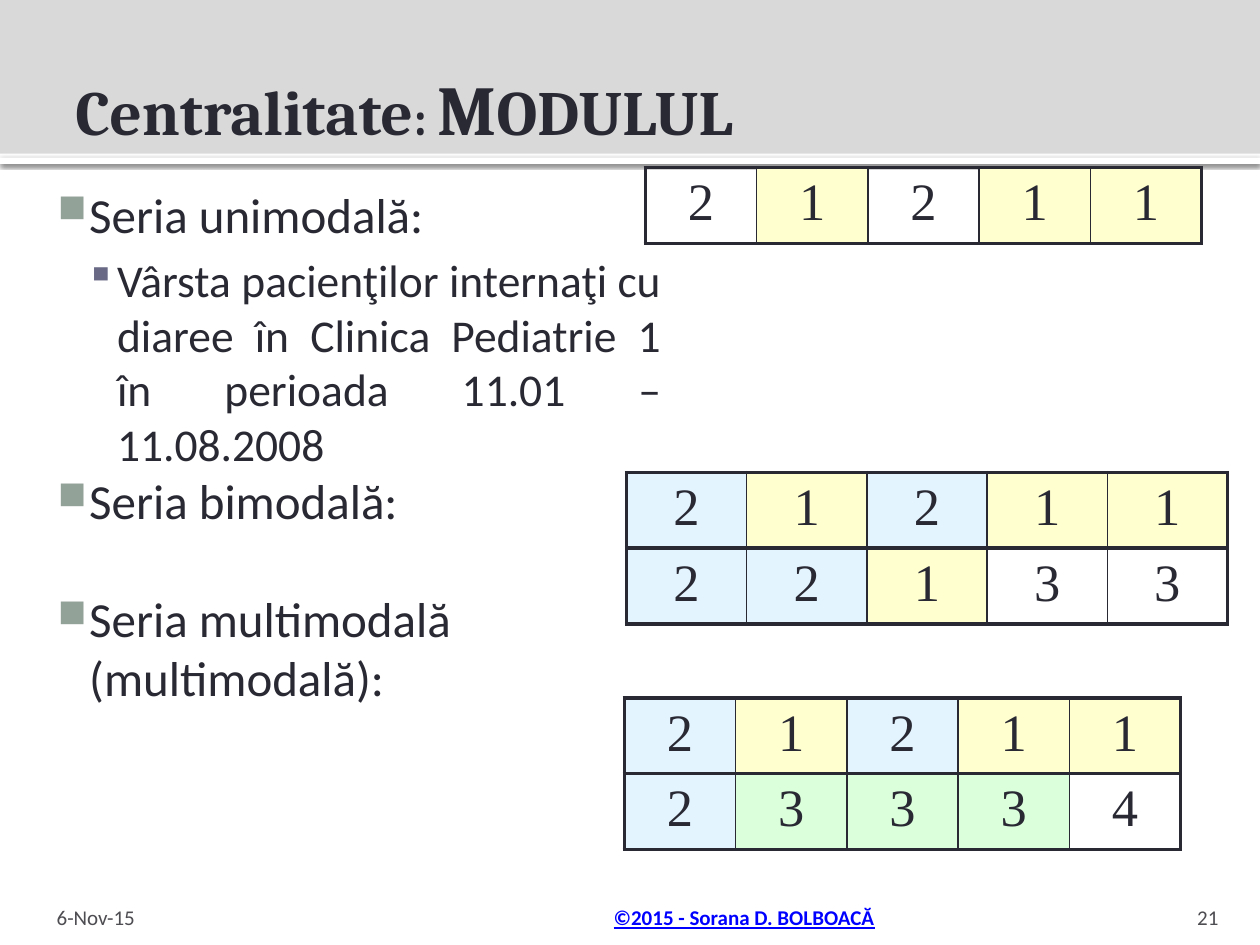
"""Build the slide on the mode of a series, with three example tables."""
from lxml import etree
from pptx import Presentation
from pptx.dml.color import RGBColor
from pptx.enum import shapes, text
from pptx.oxml import ns
from pptx.util import Pt

COLORS = {
    "ink": "292934", "banner": "D9D9D9", "strip": "FFFFFF", "shadow": "000000",
    "link": "0000FF", "muted": "4D4D52", "square": "93A299", "dash": "696986",
}
MODE_FILLS = {1: "FFFFCF", 2: "E3F4FF", 3: "DBFFDB"}

BANDS = [
    ((0, 90, 720, 3.6), "strip"),
    ((0, -0.7, 720, 88.5), "banner"),
]
TITLE = [("Centralitate", 36), (": ", 28), ("M", 40), ("ODULUL", 36)]
FOOTERS = [
    ("©2015 - Sorana D. BOLBOACĂ", (203.8, 509.8, 437.8, 21.6), "CENTER",
     (8.6, 3.6, 3.6, 0), {"color": "link", "bold": True, "underline": True}),
    ("6-Nov-15", (23.8, 509.8, 167.8, 21.6), "LEFT", (8.6, 3.6, 3.6, 0), {"color": "muted"}),
    ("21", (645.8, 509.8, 57.6, 21.6), "RIGHT", (7.2, 3.6, 7.2, 0), {"color": "muted"}),
]
SERIES = [
    ("Seria unimodală:", 0, "JUSTIFY", 0),
    ("Vârsta pacienţilor internaţi cu diaree în Clinica Pediatrie 1 "
     "în perioada 11.01 – 11.08.2008", 1, "JUSTIFY", 5.2),
    ("Seria bimodală:", 0, "JUSTIFY", 0),
    ("Seria multimodală (multimodală):", 0, "LEFT", 34),
]
LEVELS = [
    {"size": 28, "margin": 34.5, "mark": "■", "color": "square", "percent": 80},
    {"size": 26, "margin": 50.4, "mark": "▪", "color": "dash", "percent": 90},
]
HANGING = 18
EXAMPLES = [
    {"at": (368.8, 95.8), "width": 318, "modes": [1], "rows": [[2, 1, 2, 1, 1]]},
    {"at": (358, 270), "width": 343.5, "modes": [1, 2],
     "rows": [[2, 1, 2, 1, 1], [2, 2, 1, 3, 3]]},
    {"at": (356.8, 398.8), "width": 318, "modes": [1, 2, 3],
     "rows": [[2, 1, 2, 1, 1], [2, 3, 3, 3, 4]]},
]
ROW_HEIGHT = 43.2
THICK, THIN = 2.25, 1


def rgb(name):
    return RGBColor.from_string(COLORS[name])


def add_node(parent, tag, **attributes):
    node = etree.SubElement(parent, ns.qn(tag))
    for key, value in attributes.items():
        node.set(key, str(value))
    return node


def add_text(paragraph, words, size=12, font="Calibri", color="ink", bold=False, underline=False):
    run = paragraph.add_run()
    run.text = words
    run.font.size, run.font.name = Pt(size), font
    run.font.bold, run.font.underline = bold, underline
    run.font.color.rgb = rgb(color)


def add_frame(slide, box, insets, anchor="TOP"):
    frame = slide.shapes.add_textbox(*map(Pt, box)).text_frame
    frame.word_wrap = True
    frame.vertical_anchor = text.MSO_ANCHOR[anchor]
    (frame.margin_left, frame.margin_top,
     frame.margin_right, frame.margin_bottom) = map(Pt, insets)
    return frame


def add_band(slide, box, color):
    band = slide.shapes.add_shape(shapes.MSO_SHAPE.RECTANGLE, *map(Pt, box))
    band.shadow.inherit = False
    band.fill.solid()
    band.fill.fore_color.rgb = rgb(color)
    band.line.fill.background()
    return band


def add_shadow(band):
    effects = band._element.spPr.find(ns.qn("a:effectLst"))
    shadow = add_node(effects, "a:outerShdw", blurRad=Pt(2.5), dist=Pt(0.8),
                      dir=90 * 60000, algn="t", rotWithShape=0)
    add_node(add_node(shadow, "a:srgbClr", val=COLORS["shadow"]), "a:alpha", val=60000)


def add_bullet(paragraph, level):
    properties = paragraph._p.get_or_add_pPr()
    properties.set("marL", str(Pt(level["margin"])))
    properties.set("indent", str(-Pt(HANGING)))
    add_node(add_node(properties, "a:buClr"), "a:srgbClr", val=COLORS[level["color"]])
    add_node(properties, "a:buSzPct", val=level["percent"] * 1000)
    add_node(properties, "a:buChar", char=level["mark"])


def add_borders(cell, is_first, is_last):
    widths = {"L": THICK if is_first else THIN, "R": THICK if is_last else THIN,
              "T": THICK, "B": THICK}
    properties = cell._tc.get_or_add_tcPr()
    for side, width in widths.items():
        border = add_node(properties, f"a:ln{side}", w=Pt(width))
        add_node(add_node(border, "a:solidFill"), "a:srgbClr", val=COLORS["ink"])


def add_example(slide, example):
    rows = example["rows"]
    count = len(rows[0])
    table = slide.shapes.add_table(
        len(rows), count, *map(Pt, example["at"]),
        Pt(example["width"]), Pt(ROW_HEIGHT * len(rows))).table
    table.first_row = table.horz_banding = False
    for column in table.columns:
        column.width = Pt(example["width"] / count)
    for row, values in enumerate(rows):
        for column, value in enumerate(values):
            cell = table.cell(row, column)
            add_borders(cell, column == 0, column == count - 1)
            if value in example["modes"]:
                cell.fill.solid()
                cell.fill.fore_color.rgb = RGBColor.from_string(MODE_FILLS[value])
            else:
                cell.fill.background()
            paragraph = cell.text_frame.paragraphs[0]
            paragraph.alignment = text.PP_ALIGN.CENTER
            add_text(paragraph, str(value), size=30, font="Times New Roman")


def main():
    deck = Presentation()
    deck.slide_width, deck.slide_height = Pt(720), Pt(540)
    slide = deck.slides.add_slide(deck.slide_layouts[6])

    strip, _ = [add_band(slide, box, color) for box, color in BANDS]
    add_shadow(strip)

    title = add_frame(slide, (36, 12.2, 648, 98.6), (7.2, 3.6, 3.6, 3.6), "MIDDLE")
    for words, size in TITLE:
        add_text(title.paragraphs[0], words, size=size, font="Cambria", bold=True)

    for words, box, alignment, insets, style in FOOTERS:
        footer = add_frame(slide, box, insets, "BOTTOM").paragraphs[0]
        footer.alignment = text.PP_ALIGN[alignment]
        add_text(footer, words, **style)

    outline = add_frame(slide, (12.2, 98, 373, 404), (4.3, 7.2, 7.2, 3.6))
    for index, (words, depth, alignment, gap) in enumerate(SERIES):
        item = outline.add_paragraph() if index else outline.paragraphs[0]
        item.level = depth
        item.alignment = text.PP_ALIGN[alignment]
        item.space_before = Pt(gap)
        add_bullet(item, LEVELS[depth])
        add_text(item, words, size=LEVELS[depth]["size"])

    for example in EXAMPLES:
        add_example(slide, example)

    deck.save("out.pptx")


if __name__ == "__main__":
    main()
